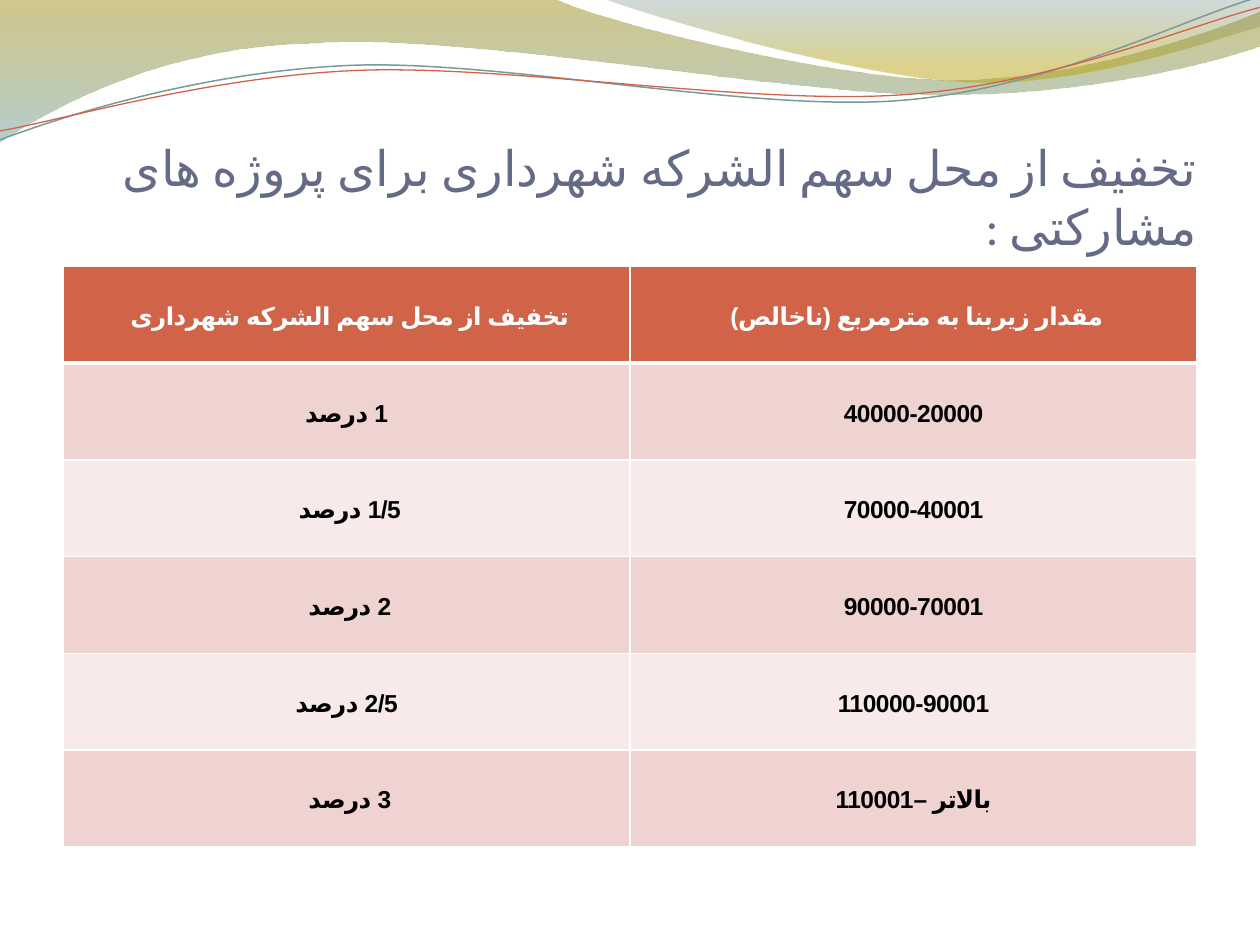
from lxml.etree import SubElement
from pptx import Presentation
from pptx.dml.color import RGBColor
from pptx.enum.text import MSO_ANCHOR, PP_ALIGN
from pptx.oxml.ns import qn
from pptx.util import Cm, Pt

COLORS = {
    "white": "FFFFFF", "black": "000000", "title": "646B86",
    "header": "D16349", "odd_row": "EED3D0", "even_row": "F7EAE9",
    "olive": "978500", "teal": "77A5A6", "slate": "648484",
    "gold": "B49F00", "gray_line": "7C999A", "red_line": "D16349",
}

TITLE = "تخفیف از محل سهم الشرکه شهرداری برای پروژه های مشارکتی : "
ROWS = [
    ("تخفیف از محل سهم الشرکه شهرداری ", "مقدار زیربنا به مترمربع (ناخالص) "),
    ("1 درصد", "40000-20000"),
    ("1/5 درصد ", "70000-40001"),
    ("2 درصد ", "90000-70001"),
    ("2/5 درصد", "110000-90001"),
    ("3 درصد ", "بالاتر –110001"),
]

BANDS = [
    ([(0, 0), (11.18, -0.03),
      (12.09, 0.43, 16.87, 1.6, 19.25, 1.6),
      (21.67, 1.6, 24.33, 0.66, 25.4, 0.23), (25.43, 0.91),
      (24.97, 1.12, 22.1, 1.93, 18.95, 1.91),
      (15.8, 1.91, 9.7, 0.71, 6.53, 0.86),
      (3.28, 0.91, 1.17, 2.11, -0.03, 2.87)],
     [(0, "olive", 45), (1, "teal", 55)]),
    ([(12.17, -0.03),
      (12.93, 0.28, 17.32, 1.57, 19.53, 1.65),
      (21.74, 1.75, 24.41, 0.81, 25.4, 0.53), (25.4, 0)],
     [(0, "slate", 30), (0.8, "gold", 45)]),
]
STRANDS = [
    ([(0, 2.82),
      (1.22, 2.36, 4.01, 1.45, 7.04, 1.32),
      (10.03, 1.19, 15.06, 2.26, 18.11, 2.03),
      (21.16, 1.8, 23.83, 0.38, 25.35, -0.05)], "gray_line", 0.85),
    ([(0, 2.64),
      (1.19, 2.44, 4.17, 1.55, 7.19, 1.42),
      (10.24, 1.3, 15.16, 2.13, 18.21, 1.91),
      (21.23, 1.7, 23.9, 0.53, 25.4, 0.15)], "red_line", 0.75),
]


def color(name):
    return RGBColor.from_string(COLORS[name])


def add_outline(slide, left, top, segments, close):
    anchors = [(left + Cm(segment[-2]), top + Cm(segment[-1])) for segment in segments]
    builder = slide.shapes.build_freeform(*anchors[0])
    builder.add_line_segments(anchors[1:], close=close)
    shape = builder.convert_to_shape()
    shape.shadow.inherit = False
    straight_lines = list(shape.element.spPr.iter(qn("a:lnTo")))
    for line, segment in zip(straight_lines, segments[1:]):
        if len(segment) == 6:
            line.tag = qn("a:cubicBezTo")
            for index, (x, y) in enumerate((segment[:2], segment[2:4])):
                control = line.makeelement(qn("a:pt"), {
                    "x": str(left + Cm(x) - shape.left),
                    "y": str(top + Cm(y) - shape.top)})
                line.insert(index, control)
    return shape


def add_waves(slide, left, top):
    for segments, stops in BANDS:
        shape = add_outline(slide, left, top, segments, True)
        shape.line.fill.background()
        shape.fill.gradient()
        shape.fill.gradient_angle = 270
        for stop, (position, name, opacity) in zip(shape.fill.gradient_stops, stops):
            stop.position = position
            stop.color.rgb = color(name)
        stop_colors = list(shape.element.spPr.iter(qn("a:srgbClr")))
        for element, (position, name, opacity) in zip(stop_colors, stops):
            SubElement(element, qn("a:alpha"), val=str(opacity * 1000))
    for segments, name, width in STRANDS:
        shape = add_outline(slide, left, top, segments, False)
        shape.fill.background()
        shape.line.color.rgb = color(name)
        shape.line.width = Pt(width)


def write_text(text_frame, text, alignment, fonts, size, color_name):
    latin_font, script_font = fonts
    text_frame.text = text
    paragraph = text_frame.paragraphs[0]
    paragraph.alignment = alignment
    paragraph._p.get_or_add_pPr().set("rtl", "1")
    run = paragraph.runs[0]
    run.font.name = latin_font
    run.font.size = Pt(size)
    run.font.color.rgb = color(color_name)
    properties = run._r.get_or_add_rPr()
    properties.set("lang", "fa-IR")
    SubElement(properties, qn("a:cs"), typeface=script_font)
    return paragraph


def add_title(slide, left, top, width, height):
    text_frame = slide.shapes.add_textbox(left, top, width, height).text_frame
    text_frame.word_wrap = True
    text_frame.vertical_anchor = MSO_ANCHOR.BOTTOM
    text_frame.margin_left = text_frame.margin_right = text_frame.margin_bottom = 0
    text_frame.margin_top = Cm(0.13)
    write_text(text_frame, TITLE, PP_ALIGN.RIGHT, ("Calibri", "Calibri"), 28, "title")


def set_borders(cell, widths):
    properties = cell._tc.get_or_add_tcPr()
    for index, (side, width) in enumerate(widths.items()):
        line = properties.makeelement(qn(f"a:ln{side}"), {"w": str(Pt(width))})
        fill = SubElement(line, qn("a:solidFill"))
        SubElement(fill, qn("a:srgbClr"), val=COLORS["white"])
        properties.insert(index, line)


def fill_cell(cell, text, row):
    is_header = row == 0
    cell.fill.solid()
    cell.fill.fore_color.rgb = color(
        "header" if is_header else "odd_row" if row % 2 else "even_row")
    cell.vertical_anchor = MSO_ANCHOR.MIDDLE
    cell.margin_left = cell.margin_right = Cm(0.18)
    cell.margin_top = cell.margin_bottom = 0
    paragraph = write_text(cell.text_frame, text, PP_ALIGN.CENTER,
                           ("Times New Roman", "Arial"), 14,
                           "white" if is_header else "black")
    paragraph.line_spacing = 1.15
    run = paragraph.runs[0]
    run.font.bold = True
    run._r.get_or_add_rPr().set("spc", "-30")
    set_borders(cell, {"L": 1, "R": 1, "T": 3 if row == 1 else 1,
                       "B": 3 if is_header else 1})


def add_discount_table(slide, left, top, width, height):
    table = slide.shapes.add_table(len(ROWS), len(ROWS[0]),
                                   left, top, width, height).table
    for row, texts in enumerate(ROWS):
        for column, text in enumerate(texts):
            fill_cell(table.cell(row, column), text, row)


def main():
    presentation = Presentation()
    presentation.slide_width = Cm(25.4)
    presentation.slide_height = Cm(19.05)
    slide = presentation.slides.add_slide(presentation.slide_layouts[6])
    add_waves(slide, 0, 0)
    add_title(slide, Cm(1.27), Cm(1.96), Cm(22.86), Cm(3.18))
    add_discount_table(slide, Cm(1.27), Cm(5.37), Cm(22.86), Cm(11.7))
    presentation.save("out.pptx")


if __name__ == "__main__":
    main()
